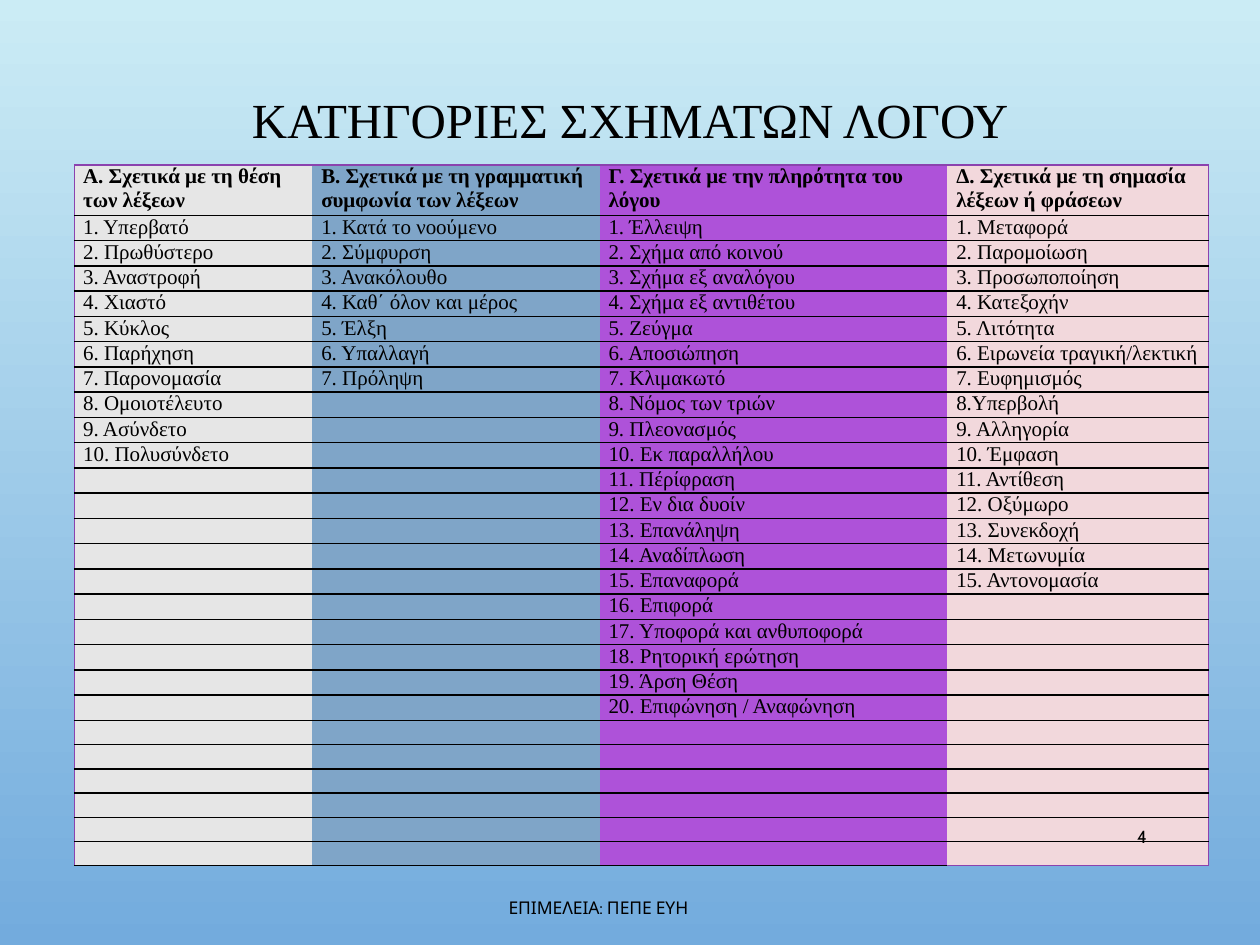
from lxml.etree import SubElement as Sub
from pptx import Presentation
from pptx.dml.color import RGBColor as RGB
from pptx.enum.text import MSO_ANCHOR as Anchor, PP_ALIGN as Align
from pptx.oxml.ns import qn
from pptx.util import Inches, Pt

WIDE, HIGH = Inches(10), Inches(7.5)
BLACK = RGB(0x00, 0x00, 0x00)
PURPLE = RGB(0x8B, 0x42, 0xAE)
SKY = RGB(0xCB, 0xEC, 0xF5)
BLUE = RGB(0x73, 0xAB, 0xDD)
GREY = RGB(0xE6, 0xE6, 0xE6)
STEEL = RGB(0x7F, 0xA5, 0xC8)
VIOLET = RGB(0xAE, 0x52, 0xD9)
PINK = RGB(0xF2, 0xD8, 0xDC)
SERIF, SANS = "Times New Roman", "Cabin"

ROWS = 27
HEAD, ROW = 0.39, 0.1925
# Each column: width, fill, heading, entries
COLS = [
    (1.89, GREY, "Α. Σχετικά με τη θέση των λέξεων", [
        "1. Υπερβατό", "2. Πρωθύστερο", "3. Αναστροφή", "4. Χιαστό",
        "5. Κύκλος", "6. Παρήχηση", "7. Παρονομασία", "8. Ομοιοτέλευτο",
        "9. Ασύνδετο", "10. Πολυσύνδετο"]),
    (2.28, STEEL, "Β. Σχετικά με τη γραμματική συμφωνία των λέξεων", [
        "1. Κατά το νοούμενο", "2. Σύμφυρση", "3. Ανακόλουθο",
        "4. Καθ΄ όλον και μέρος", "5. Έλξη", "6. Υπαλλαγή", "7. Πρόληψη"]),
    (2.76, VIOLET, "Γ. Σχετικά με την πληρότητα του λόγου", [
        "1. Έλλειψη", "2. Σχήμα από κοινού", "3. Σχήμα εξ αναλόγου",
        "4. Σχήμα εξ αντιθέτου", "5. Ζεύγμα", "6. Αποσιώπηση",
        "7. Κλιμακωτό", "8. Νόμος των τριών", "9. Πλεονασμός",
        "10. Εκ παραλλήλου", "11. Πέρίφραση", "12. Εν δια δυοίν",
        "13. Επανάληψη", "14. Αναδίπλωση", "15. Επαναφορά", "16. Επιφορά",
        "17. Υποφορά και ανθυποφορά", "18. Ρητορική ερώτηση",
        "19. Άρση Θέση", "20. Επιφώνηση / Αναφώνηση"]),
    (2.07, PINK, "Δ. Σχετικά με τη σημασία λέξεων ή φράσεων", [
        "1. Μεταφορά", "2. Παρομοίωση", "3. Προσωποποίηση", "4. Κατεξοχήν",
        "5. Λιτότητα", "6. Ειρωνεία τραγική/λεκτική", "7. Ευφημισμός",
        "8.Υπερβολή", "9. Αλληγορία", "10. Έμφαση", "11. Αντίθεση",
        "12. Οξύμωρο", "13. Συνεκδοχή", "14. Μετωνυμία",
        "15. Αντονομασία"]),
]


def assign(obj, **values):
    for name, value in values.items():
        setattr(obj, name, value)


def write(para, text, face, size, bold=False):
    run = para.add_run()
    run.text = text
    assign(run.font, name=face, size=Pt(size), bold=bold)
    run.font.color.rgb = BLACK


def label(slide, box, text, face, size, align, spacing=1.0):
    """Place one line of text; box is given as shares of the slide."""
    x, y, w, h = box
    shape = slide.shapes.add_textbox(
        round(x * WIDE), round(y * HIGH), round(w * WIDE), round(h * HIGH))
    assign(shape.text_frame, word_wrap=True, vertical_anchor=Anchor.MIDDLE,
           margin_top=0, margin_bottom=0)
    para = shape.text_frame.paragraphs[0]
    assign(para, alignment=align, line_spacing=spacing)
    write(para, text, face, size)


def edge(cell, side, color, width):
    """Draw one border of a cell, or clear it when color is None."""
    line = Sub(cell._tc.get_or_add_tcPr(), qn(f"a:ln{side}"))
    if color is None:
        line.set("w", "0")
        Sub(line, qn("a:noFill"))
        return
    line.set("w", str(Pt(width)))
    fill = Sub(line, qn("a:solidFill"))
    Sub(fill, qn("a:srgbClr")).set("val", str(color))


def frame(cell, row, col):
    """Purple round the table, black between its rows."""
    outer, inner, none = (PURPLE, 0.75), (BLACK, 1), (None, 0)
    last = len(COLS) - 1
    corner = row == ROWS - 1 and col == last
    edge(cell, "L", *(outer if col == 0 else none))
    edge(cell, "R", *(outer if col == last else none))
    edge(cell, "T", *(outer if row == 0 else inner))
    edge(cell, "B", *(outer if corner else inner))


def fill_cell(cell, text, color, bold):
    assign(cell, margin_left=Inches(0.07), margin_right=Inches(0.07),
           margin_top=0, margin_bottom=0)
    cell.fill.solid()
    cell.fill.fore_color.rgb = color
    para = cell.text_frame.paragraphs[0]
    if text:
        write(para, text, SERIF, 12, bold)
    else:
        Sub(para._p, qn("a:endParaRPr")).set("sz", "1000")


def grid(slide, left, top):
    wide = sum(col[0] for col in COLS)
    high = HEAD + ROW * (ROWS - 1)
    table = slide.shapes.add_table(
        ROWS, len(COLS), Inches(left), Inches(top),
        Inches(wide), Inches(high)).table
    assign(table, first_row=False, horz_banding=False)
    for r, row in enumerate(table.rows):
        row.height = Inches(ROW if r else HEAD)
    for c, (width, color, head, items) in enumerate(COLS):
        table.columns[c].width = Inches(width)
        texts = [head] + items
        texts += [""] * (ROWS - len(texts))
        for r, text in enumerate(texts):
            cell = table.cell(r, c)
            frame(cell, r, c)
            fill_cell(cell, text, color, r == 0)


def backdrop(slide):
    fill = slide.background.fill
    fill.gradient()
    fill.gradient_angle = 270
    for stop, color, place in zip(fill.gradient_stops, (SKY, BLUE), (0, 1)):
        stop.color.rgb = color
        stop.position = place


def main():
    deck = Presentation()
    assign(deck, slide_width=WIDE, slide_height=HIGH)
    slide = deck.slides.add_slide(deck.slide_layouts[6])
    backdrop(slide)
    label(slide, (0.05, 0.1, 0.9, 0.06), "ΚΑΤΗΓΟΡΙΕΣ ΣΧΗΜΑΤΩΝ ΛΟΓΟΥ",
          SERIF, 28, Align.CENTER, 0.9)
    grid(slide, 0.59, 1.31)
    label(slide, (0.29, 0.94, 0.37, 0.04), "ΕΠΙΜΕΛΕΙΑ: ΠΕΠΕ ΕΥΗ",
          SANS, 10, Align.CENTER)
    label(slide, (0.86, 0.86, 0.06, 0.05), "4", SANS, 10, Align.RIGHT)
    deck.save("out.pptx")


if __name__ == "__main__":
    main()
